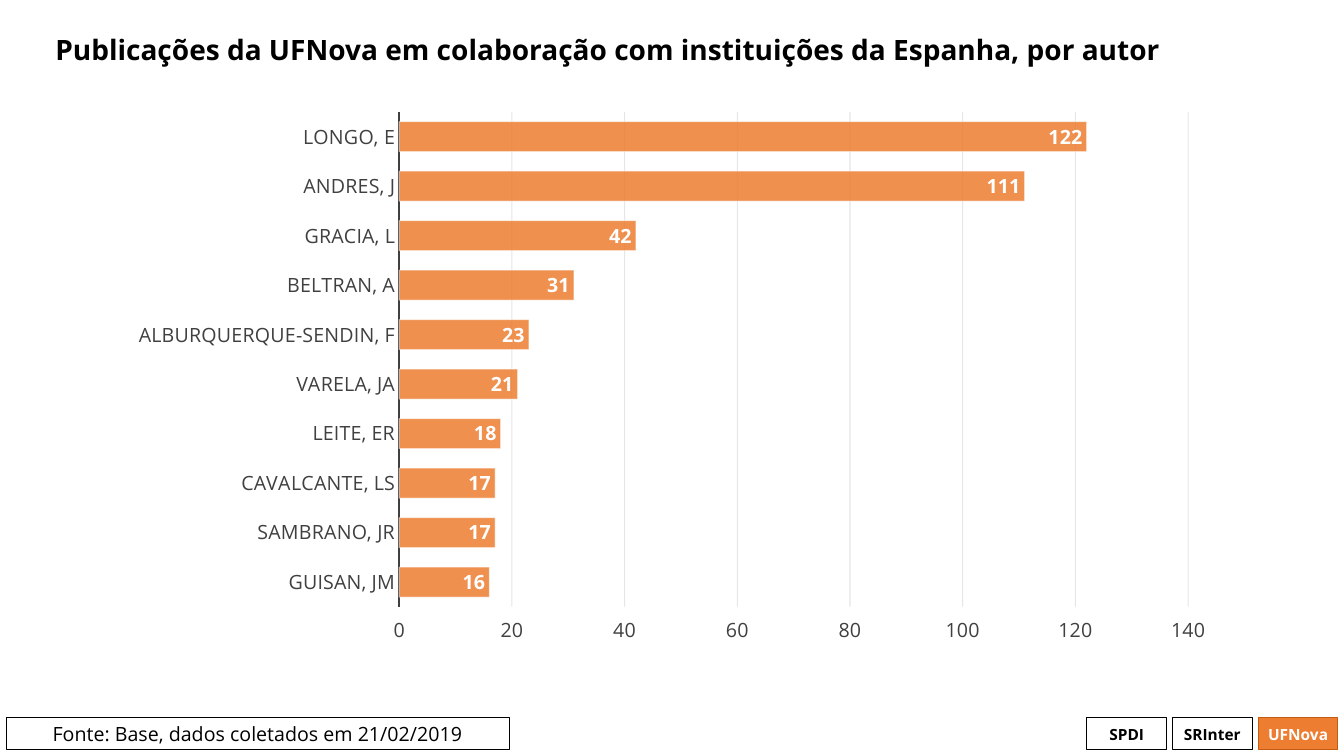
from dataclasses import dataclass

import pptx
import pptx.chart.data
import pptx.dml.color
import pptx.enum.chart
import pptx.enum.text
import pptx.enum.shapes
import pptx.oxml
import pptx.oxml.ns
import pptx.util
from pptx.util import Inches


@dataclass(frozen=True)
class Theme:
    font: str = "Open Sans"
    black: str = "000000"
    white: str = "FFFFFF"
    orange: str = "ED7D31"
    dark_orange: str = "C55A11"
    axis: str = "404040"
    grid: str = "0D0D0D"
    title_size: int = 20
    body_size: int = 14
    badge_size: int = 11
    thin: float = 0.75


THEME = Theme()

PUBLICATIONS = {
    "LONGO, E": 122,
    "ANDRES, J": 111,
    "GRACIA, L": 42,
    "BELTRAN, A": 31,
    "ALBURQUERQUE-SENDIN, F": 23,
    "VARELA, JA": 21,
    "LEITE, ER": 18,
    "CAVALCANTE, LS": 17,
    "SAMBRANO, JR": 17,
    "GUISAN, JM": 16,
}
BADGES = (
    ("SPDI", None, THEME.black, THEME.black),
    ("SRInter", None, THEME.black, THEME.black),
    ("UFNova", THEME.orange, THEME.dark_orange, THEME.white),
)
BADGE_LEFT, BADGE_STEP, BADGE_WIDTH = 10.78, 0.85, 0.79
FOOTER_TOP, FOOTER_HEIGHT = 7.12, 0.32


def rgb(color):
    return pptx.dml.color.RGBColor.from_string(color)


def set_font(font, size, color, bold=False):
    font.name = THEME.font
    font.size = pptx.util.Pt(size)
    font.bold = bold
    font.color.rgb = rgb(color)


def set_line(line, color, width=THEME.thin):
    line.color.rgb = rgb(color)
    line.width = pptx.util.Pt(width)


def add_title(slide, text):
    title = slide.shapes.add_textbox(Inches(0.45), Inches(0.06), Inches(12.41), Inches(0.91))
    frame = title.text_frame
    frame.word_wrap = True
    frame.vertical_anchor = pptx.enum.text.MSO_ANCHOR.MIDDLE
    paragraph = frame.paragraphs[0]
    paragraph.text = text
    paragraph.line_spacing = 0.9
    set_font(paragraph.font, THEME.title_size, THEME.black, bold=True)


def add_footer_box(slide, text, left, width, size, fill=None,
                   border=THEME.black, color=THEME.black, bold=False):
    box = slide.shapes.add_shape(
        pptx.enum.shapes.MSO_SHAPE.RECTANGLE,
        Inches(left), Inches(FOOTER_TOP), Inches(width), Inches(FOOTER_HEIGHT))
    box.shadow.inherit = False
    if fill:
        box.fill.solid()
        box.fill.fore_color.rgb = rgb(fill)
    else:
        box.fill.background()
    set_line(box.line, border)
    frame = box.text_frame
    frame.word_wrap = True
    frame.margin_left = frame.margin_right = Inches(0.02)
    frame.vertical_anchor = pptx.enum.text.MSO_ANCHOR.MIDDLE
    paragraph = frame.paragraphs[0]
    paragraph.text = text
    paragraph.alignment = pptx.enum.text.PP_ALIGN.CENTER
    set_font(paragraph.font, size, color, bold)


def set_opacity(chart, parent, percent):
    """Apply an opacity to the first colour below the given chart XML path."""
    color = chart.element.xpath(f".//{parent}/a:solidFill/a:srgbClr")[0]
    alpha = color.makeelement(pptx.oxml.ns.qn("a:alpha"), {"val": str(percent * 1000)})
    color.append(alpha)


def set_plot_layout(chart, x, y, w, h):
    """Place the inner plot area, in fractions of the chart."""
    plot_area = chart.element.xpath(".//c:plotArea")[0]
    for layout in plot_area.xpath("./c:layout"):
        plot_area.remove(layout)
    modes = '<c:layoutTarget val="inner"/><c:xMode val="edge"/><c:yMode val="edge"/>'
    sizes = "".join(f'<c:{key} val="{value}"/>'
                    for key, value in (("x", x), ("y", y), ("w", w), ("h", h)))
    plot_area.insert(0, pptx.oxml.parse_xml(
        f'<c:layout {pptx.oxml.ns.nsdecls("c")}>'
        f"<c:manualLayout>{modes}{sizes}</c:manualLayout></c:layout>"))


def style_author_axis(axis):
    axis.reverse_order = True
    axis.major_tick_mark = pptx.enum.chart.XL_TICK_MARK.NONE
    axis.has_major_gridlines = False
    set_line(axis.format.line, THEME.axis, 1.5)
    set_font(axis.tick_labels.font, THEME.body_size, THEME.axis)


def style_count_axis(axis):
    axis.minimum_scale, axis.maximum_scale, axis.major_unit = 0, 140, 20
    axis.major_tick_mark = pptx.enum.chart.XL_TICK_MARK.NONE
    axis.tick_label_position = pptx.enum.chart.XL_TICK_LABEL_POSITION.HIGH
    axis.format.line.fill.background()
    axis.has_major_gridlines = True
    set_line(axis.major_gridlines.format.line, THEME.grid)
    set_font(axis.tick_labels.font, THEME.body_size, THEME.axis)


def style_bars(plot):
    plot.gap_width = 65
    plot.vary_by_categories = False
    bars = plot.series[0]
    bars.format.fill.solid()
    bars.format.fill.fore_color.rgb = rgb(THEME.orange)
    set_line(bars.format.line, THEME.white)
    labels = bars.data_labels
    labels.show_value = True
    labels.position = pptx.enum.chart.XL_LABEL_POSITION.INSIDE_END
    set_font(labels.font, THEME.body_size, THEME.white, bold=True)


def add_publications_chart(slide):
    data = pptx.chart.data.CategoryChartData()
    data.categories = list(PUBLICATIONS)
    data.add_series("Series 1", list(PUBLICATIONS.values()))
    chart = slide.shapes.add_chart(
        pptx.enum.chart.XL_CHART_TYPE.BAR_CLUSTERED,
        Inches(1.15), Inches(0.99), Inches(11.02), Inches(5.51), data).chart
    chart.has_legend = False
    chart.has_title = False
    set_font(chart.font, THEME.body_size, THEME.black)
    style_author_axis(chart.category_axis)
    style_count_axis(chart.value_axis)
    style_bars(chart.plots[0])
    set_opacity(chart, "c:ser/c:spPr", 85)
    set_opacity(chart, "c:ser/c:spPr/a:ln", 50)
    set_opacity(chart, "c:majorGridlines/c:spPr/a:ln", 10)
    set_plot_layout(chart, x=0.255, y=0.022, w=0.71, h=0.891)


def main():
    deck = pptx.Presentation()
    deck.slide_width, deck.slide_height = Inches(13.33), Inches(7.5)
    slide = deck.slides.add_slide(deck.slide_layouts[6])
    for index, (name, fill, border, color) in enumerate(BADGES):
        add_footer_box(slide, name, BADGE_LEFT + index * BADGE_STEP, BADGE_WIDTH,
                       THEME.badge_size, fill, border, color, bold=True)
    add_footer_box(slide, "Fonte: Base, dados coletados em 21/02/2019",
                   0.06, 4.99, THEME.body_size)
    add_title(slide, "Publicações da UFNova em colaboração com instituições da Espanha, por autor")
    add_publications_chart(slide)
    deck.save("out.pptx")


if __name__ == "__main__":
    main()
